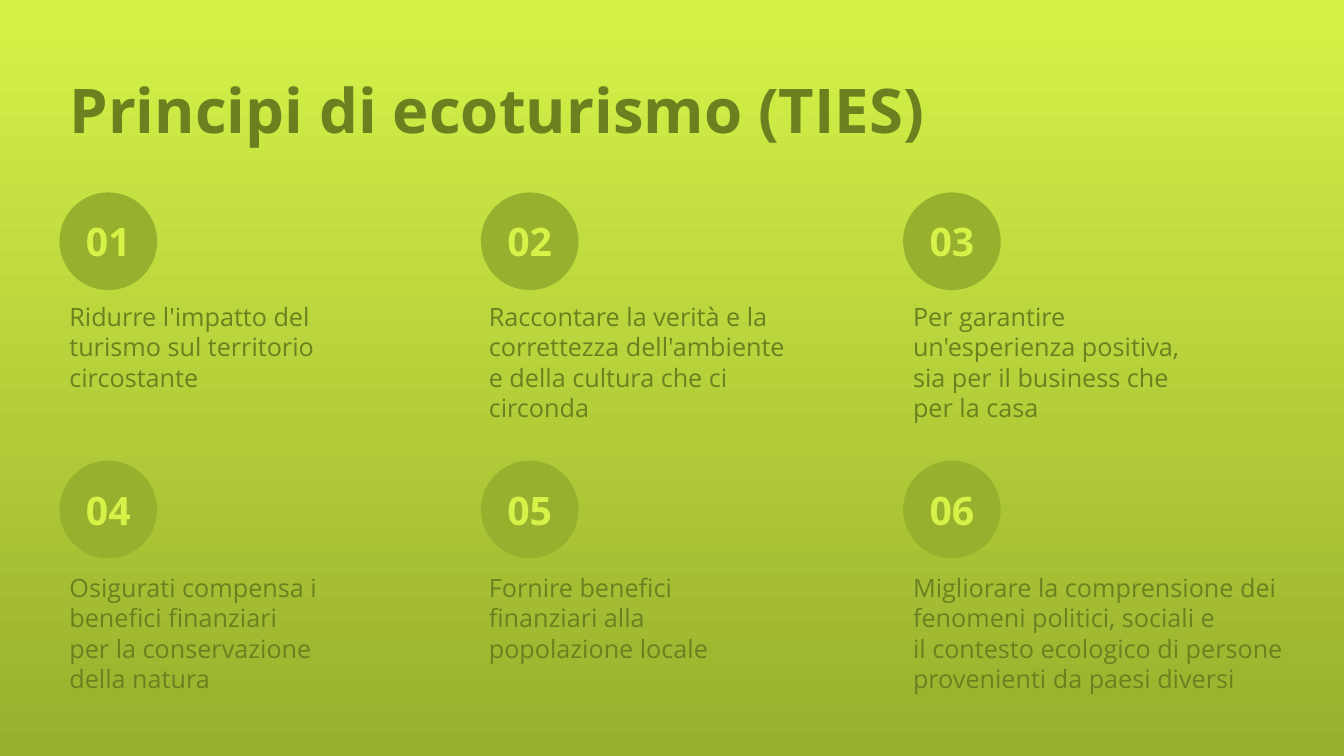
from pptx import Presentation
from pptx.dml.color import RGBColor
from pptx.enum.shapes import MSO_SHAPE
from pptx.enum.text import MSO_ANCHOR, PP_ALIGN
from pptx.util import Cm, Pt

OVAL = MSO_SHAPE.OVAL
TOP, MIDDLE = MSO_ANCHOR.TOP, MSO_ANCHOR.MIDDLE
LEFT, CENTER = PP_ALIGN.LEFT, PP_ALIGN.CENTER

COLORS = {"lime": "D6F248", "leaf": "97B02E", "moss": "6B801F"}
PRINCIPLES = [
    (6.78, ["Ridurre l'impatto del turismo sul territorio circostante"]),
    (8.03, ["Raccontare la verità e la correttezza dell'ambiente "
            "e della cultura che ci circonda"]),
    (8.03, ["Per garantire un'esperienza positiva, "
            "sia per il business che per la casa"]),
    (6.78, ["Osigurati compensa i benefici finanziari "
            "per la conservazione della natura"]),
    (7.37, ["Fornire benefici finanziari alla popolazione locale"]),
    (10.08, ["Migliorare la comprensione dei fenomeni politici, sociali e",
             "il contesto ecologico di persone provenienti da paesi diversi"]),
]
CIRCLE_LEFTS, TEXT_LEFTS = (1.5, 12.12, 22.76), (1.5, 12.07, 22.76)
CIRCLE_TOPS, TEXT_TOPS = (4.85, 11.61), (7.47, 14.3)


def write(box, lines, size=18, color="moss", bold=False, align=LEFT,
          anchor=TOP, spacing=None):
    """Fill a shape with one formatted paragraph per line."""
    frame = box.text_frame
    frame.word_wrap = True
    frame.vertical_anchor = anchor
    for index, line in enumerate(lines):
        para = frame.add_paragraph() if index else frame.paragraphs[0]
        para.alignment = align
        para.line_spacing = spacing
        span = para.add_run()
        span.text = line
        span.font.name = "Open Sans"
        span.font.size = Pt(size)
        span.font.bold = bold
        span.font.color.rgb = RGBColor.from_string(COLORS[color])


class Slide:
    """Holds the style and the current page."""

    def __init__(self, deck):
        self.page = deck.slides.add_slide(deck.slide_layouts[6])

    def background(self, start, end):
        fill = self.page.background.fill
        fill.gradient()
        fill.gradient_angle = 270
        for stop, color in zip(fill.gradient_stops, (start, end)):
            stop.color.rgb = RGBColor.from_string(COLORS[color])

    def text(self, left, top, width, height, lines, **style):
        box = self.page.shapes.add_textbox(
            Cm(left), Cm(top), Cm(width), Cm(height))
        write(box, lines, **style)

    def circle(self, left, top, size, label):
        box = self.page.shapes.add_shape(
            OVAL, Cm(left), Cm(top), Cm(size), Cm(size))
        box.shadow.inherit = False
        box.fill.solid()
        box.fill.fore_color.rgb = RGBColor.from_string(COLORS["leaf"])
        box.line.fill.background()
        write(box, [label], size=28, color="lime", bold=True,
              align=CENTER, anchor=MIDDLE)


def main():
    deck = Presentation()
    deck.slide_width, deck.slide_height = Cm(33.87), Cm(19.05)
    slide = Slide(deck)
    slide.background("lime", "leaf")
    slide.text(1.5, 1.02, 25.45, 3.68, ["Principi di ecoturismo (TIES)"],
               size=44, bold=True, anchor=MIDDLE, spacing=0.9)
    for index, (width, lines) in enumerate(PRINCIPLES):
        row, column = divmod(index, 3)
        slide.circle(CIRCLE_LEFTS[column], CIRCLE_TOPS[row], 2.46,
                     f"{index + 1:02d}")
        slide.text(TEXT_LEFTS[column], TEXT_TOPS[row], width, 3.33, lines)
    deck.save("out.pptx")


if __name__ == "__main__":
    main()
